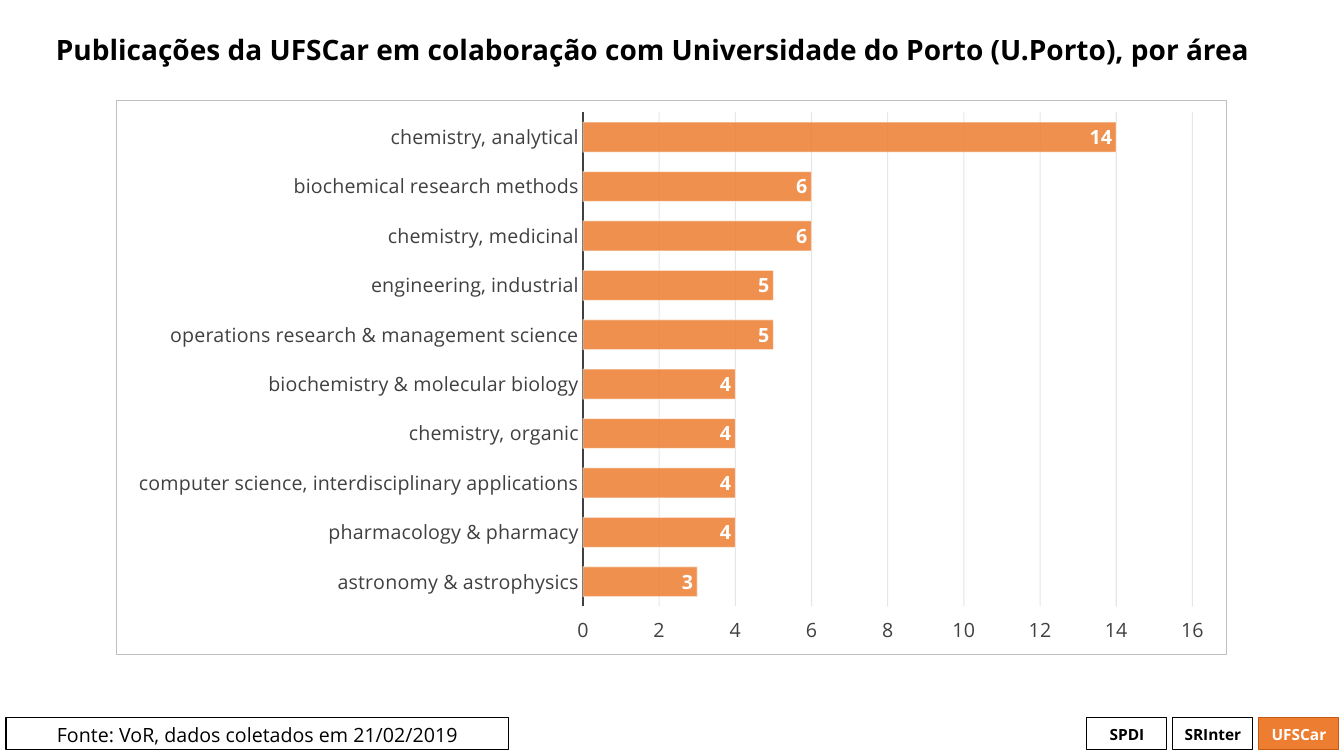
from pptx import Presentation, util as u
from pptx.chart.data import CategoryChartData
from pptx.dml.color import RGBColor
from pptx.enum import chart as ch, shapes, text
from pptx.oxml import parse_xml
from pptx.oxml.ns import nsdecls, qn
from lxml import etree

# Content
TITLE = "Publicações da UFSCar em colaboração com Universidade do Porto (U.Porto), por área"
SOURCE = "Fonte: VoR, dados coletados em 21/02/2019"
BADGES = ["SPDI", "SRInter", "UFSCar"]
AREAS = {
    "chemistry, analytical": 14,
    "biochemical research methods": 6,
    "chemistry, medicinal": 6,
    "engineering, industrial": 5,
    "operations research & management science": 5,
    "biochemistry & molecular biology": 4,
    "chemistry, organic": 4,
    "computer science, interdisciplinary applications": 4,
    "pharmacology & pharmacy": 4,
    "astronomy & astrophysics": 3,
}


class Theme:
    font = "Open Sans"
    black, white, gray = "000000", "FFFFFF", "404040"
    orange, dark_orange = "ED7D31", "C55A11"
    grid, border = "0D0D0D", "BFBFBF"
    title, body, badge = 20, 14, 11
    thin, axis = 0.75, 1.5


# Places in px
SLIDE = (1344, 756)
TITLE_BOX = (46, 5, 1251, 92)
CHART_BOX = (116, 100, 1111, 555)
PLOT_BOX = (583, 112, 610, 495)
SOURCE_BOX = (6, 718, 503, 32)
BADGE_BOX = (1087, 718, 80, 32)
BADGE_PITCH = 86


def px(value):
    return round(value * 914400 / 100.8)


def color(code):
    return RGBColor.from_string(code)


def style_font(font, size, code, bold=False):
    font.name, font.size, font.bold = Theme.font, u.Pt(size), bold
    font.color.rgb = color(code)


def style_line(line, code, width=Theme.thin):
    line.color.rgb = color(code)
    line.width = u.Pt(width)


def set_alpha(fill, percent):
    """Make a solid fill partly transparent."""
    code = fill._xPr.find(qn("a:solidFill"))[0]
    etree.SubElement(code, qn("a:alpha"), val=str(percent * 1000))


def add_text(slide, content, box, size=Theme.body, code=Theme.black, bold=False,
             align=text.PP_ALIGN.CENTER, anchor=text.MSO_ANCHOR.MIDDLE,
             fill=None, line=None, spacing=None):
    shape = slide.shapes.add_shape(shapes.MSO_SHAPE.RECTANGLE, *map(px, box))
    shape.shadow.inherit = False
    if fill:
        shape.fill.solid()
        shape.fill.fore_color.rgb = color(fill)
    else:
        shape.fill.background()
    if line:
        style_line(shape.line, line)
    else:
        shape.line.fill.background()
    frame = shape.text_frame
    frame.word_wrap, frame.vertical_anchor = True, anchor
    paragraph = frame.paragraphs[0]
    paragraph.alignment, paragraph.line_spacing = align, spacing
    run = paragraph.add_run()
    run.text = content
    style_font(run.font, size, code, bold)
    return shape


def frame_chart(chart):
    """Place the plot area and give the chart its background and border."""
    left, top, width, height = CHART_BOX
    plot_left, plot_top, plot_width, plot_height = PLOT_BOX
    place = {"x": (plot_left - left) / width, "y": (plot_top - top) / height,
             "w": plot_width / width, "h": plot_height / height}
    modes = "".join(f'<c:{key}Mode val="edge"/>' for key in "xy")
    sizes = "".join(f'<c:{key} val="{value:.4f}"/>' for key, value in place.items())
    plot_area = chart._chartSpace.chart.plotArea
    for old in plot_area.findall(qn("c:layout")):
        plot_area.remove(old)
    plot_area.insert(0, parse_xml(
        f'<c:layout {nsdecls("c")}><c:manualLayout><c:layoutTarget val="inner"/>'
        f'{modes}{sizes}</c:manualLayout></c:layout>'))
    chart._chartSpace.chart.addnext(parse_xml(
        f'<c:spPr {nsdecls("c", "a")}>'
        f'<a:solidFill><a:srgbClr val="{Theme.white}"/></a:solidFill>'
        f'<a:ln w="{u.Pt(Theme.thin)}"><a:solidFill><a:srgbClr val="{Theme.border}"/>'
        f'</a:solidFill></a:ln></c:spPr>'))


def add_area_chart(slide):
    data = CategoryChartData()
    data.categories = list(AREAS)
    data.add_series("Series 1", list(AREAS.values()))
    chart = slide.shapes.add_chart(
        ch.XL_CHART_TYPE.BAR_CLUSTERED, *map(px, CHART_BOX), data).chart
    chart.has_legend = chart.has_title = False
    style_font(chart.font, Theme.body, Theme.black)
    frame_chart(chart)

    # Axes: areas run downwards, so the high end for count labels is the bottom
    areas, counts = chart.category_axis, chart.value_axis
    for axis in (areas, counts):
        axis.major_tick_mark = axis.minor_tick_mark = ch.XL_TICK_MARK.NONE
        style_font(axis.tick_labels.font, Theme.body, Theme.gray)
    areas.reverse_order = True
    counts.tick_label_position = ch.XL_TICK_LABEL_POSITION.HIGH
    style_line(areas.format.line, Theme.gray, Theme.axis)
    counts.minimum_scale, counts.maximum_scale, counts.major_unit = 0, 16, 2
    counts.format.line.fill.background()
    counts.has_major_gridlines = True
    grid = counts.major_gridlines.format.line
    style_line(grid, Theme.grid)
    set_alpha(grid.fill, 10)

    # Bars and their values
    plot = chart.plots[0]
    plot.gap_width, plot.vary_by_categories = 65, False
    bars = plot.series[0]
    bars.invert_if_negative = False
    bars.format.fill.solid()
    bars.format.fill.fore_color.rgb = color(Theme.orange)
    set_alpha(bars.format.fill, 85)
    style_line(bars.format.line, Theme.white)
    set_alpha(bars.format.line.fill, 50)
    labels = bars.data_labels
    labels.show_value = True
    labels.position = ch.XL_LABEL_POSITION.INSIDE_END
    style_font(labels.font, Theme.body, Theme.white, bold=True)


def main():
    presentation = Presentation()
    presentation.slide_width, presentation.slide_height = map(px, SLIDE)
    slide = presentation.slides.add_slide(presentation.slide_layouts[6])

    # Footer
    left, top, width, height = BADGE_BOX
    for index, badge in enumerate(BADGES):
        active = index == len(BADGES) - 1
        add_text(slide, badge, (left + index * BADGE_PITCH, top, width, height),
                 size=Theme.badge, bold=True,
                 code=Theme.white if active else Theme.black,
                 fill=Theme.orange if active else None,
                 line=Theme.dark_orange if active else Theme.black)
    add_text(slide, SOURCE, SOURCE_BOX, line=Theme.black, anchor=text.MSO_ANCHOR.TOP)

    # Title and chart
    add_text(slide, TITLE, TITLE_BOX, size=Theme.title, bold=True,
             align=text.PP_ALIGN.LEFT, spacing=0.9)
    add_area_chart(slide)
    presentation.save("out.pptx")


if __name__ == "__main__":
    main()
